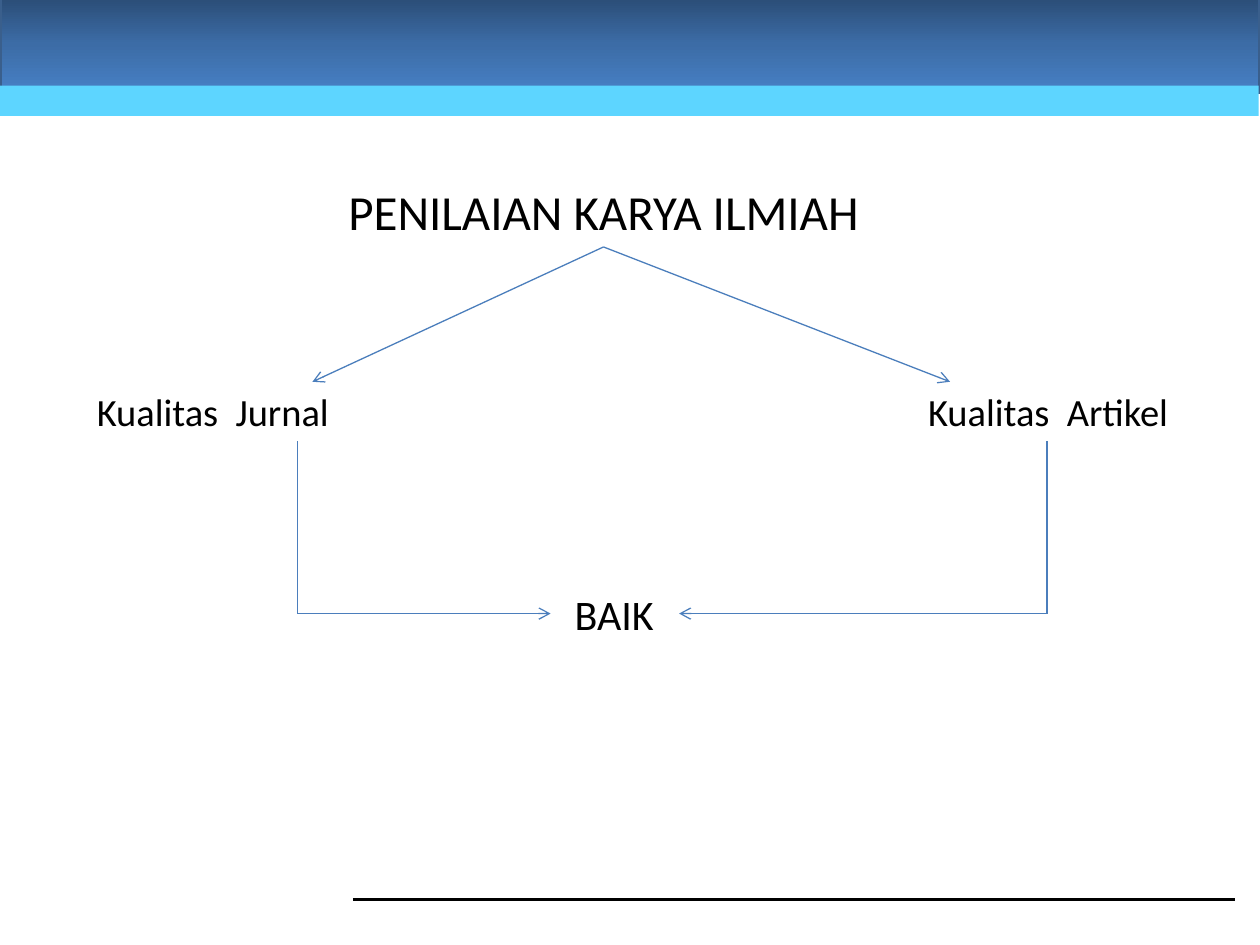
import copy

import pptx
import pptx.dml.color
import pptx.enum.dml
import pptx.enum.shapes
import pptx.enum.text
import pptx.oxml.ns
import pptx.util
import lxml.etree

COLORS = {
    "band_top": "2A4C75", "band_mid": "3C6CA6", "band_end": "4780C5",
    "band_edge": "3A5F8C", "stripe": "5DD5FF", "arrow": "4B7EBC", "ink": "000000",
}
rgb = {name: pptx.dml.color.RGBColor.from_string(c) for name, c in COLORS.items()}
qn = pptx.oxml.ns.qn
RECT = pptx.enum.shapes.MSO_SHAPE.RECTANGLE
ALIGN = pptx.enum.text.PP_ALIGN

prs = pptx.Presentation()
prs.slide_width = pptx.util.Inches(10)
prs.slide_height = pptx.util.Inches(7.5)
s = prs.slides.add_slide(prs.slide_layouts[6])

# Grid of 100 columns by 75 rows
COL = prs.slide_width / 100
ROW = prs.slide_height / 75


def grid(x, y, x2, y2):
    return int(x * COL), int(y * ROW), int(x2 * COL), int(y2 * ROW)


def add_line(start, end, color, width, arrow=False):
    line = s.shapes.add_connector(
        pptx.enum.shapes.MSO_CONNECTOR.STRAIGHT, *grid(*start, *end))
    line.line.color.rgb = rgb[color]
    line.line.width = pptx.util.Pt(width)
    if arrow:
        ln = line.line._get_or_add_ln()
        lxml.etree.SubElement(ln, qn("a:tailEnd"), type="arrow")
    lxml.etree.SubElement(line._element.spPr, qn("a:effectLst"))


# Header band with a three-stop gradient
band = s.shapes.add_shape(RECT, *grid(0, -0.3, 100, 7.6))
band.shadow.inherit = False
band.fill.gradient()
band.fill.gradient_angle = 270
stops = band._element.spPr.find(".//" + qn("a:gsLst"))
stops.insert(1, copy.deepcopy(stops[0]))
for i, (stop, name) in enumerate(zip(band.fill.gradient_stops,
                                     ("band_top", "band_mid", "band_end"))):
    stop.position = i / 2
    stop.color.rgb = rgb[name]
band.line.color.rgb = rgb["band_edge"]
band.line.width = pptx.util.Pt(2)

# Light stripe under the band
stripe = s.shapes.add_shape(RECT, *grid(-0.2, 6.8, 100.1, 2.4))
stripe.shadow.inherit = False
stripe.fill.solid()
stripe.fill.fore_color.rgb = rgb["stripe"]
stripe.line.fill.background()

# Footer rule
add_line((28, 71.4), (98, 71.4), "ink", 1.75)

# Labels
labels = [
    ("PENILAIAN KARYA ILMIAH", (8.8, 13.9, 78.2, 5.7), 28, ALIGN.CENTER),
    ("Kualitas  Jurnal", (6.7, 30.3, 33.9, 4.7), 22, ALIGN.LEFT),
    ("Kualitas  Artikel", (57.1, 30.3, 36.6, 4.7), 22, ALIGN.RIGHT),
    ("BAIK", (40.4, 46.2, 16.7, 5), 24, ALIGN.CENTER),
]
for text, box, size, align in labels:
    tf = s.shapes.add_textbox(*grid(*box)).text_frame
    tf.word_wrap = True
    tf.auto_size = pptx.enum.text.MSO_AUTO_SIZE.SHAPE_TO_FIT_TEXT
    tf.text = text
    p = tf.paragraphs[0]
    p.alignment = align
    r = p.runs[0]
    r.font.name = "Calibri"
    r.font.size = pptx.util.Pt(size)
    r.font.color.rgb = rgb["ink"]

# Each branch: title to quality label, then down and across to the result
title_foot = (47.9, 19.6)
label_top, label_foot, result_y = 30.3, 35, 48.7
for label_x, elbow_x, result_x in [(24.8, 23.6, 43.7), (75.4, 83.1, 53.9)]:
    elbow = (elbow_x, result_y)
    add_line(title_foot, (label_x, label_top), "arrow", 0.75, arrow=True)
    add_line((elbow_x, label_foot), elbow, "arrow", 0.75)
    add_line(elbow, (result_x, result_y), "arrow", 0.75, arrow=True)

prs.save("out.pptx")
